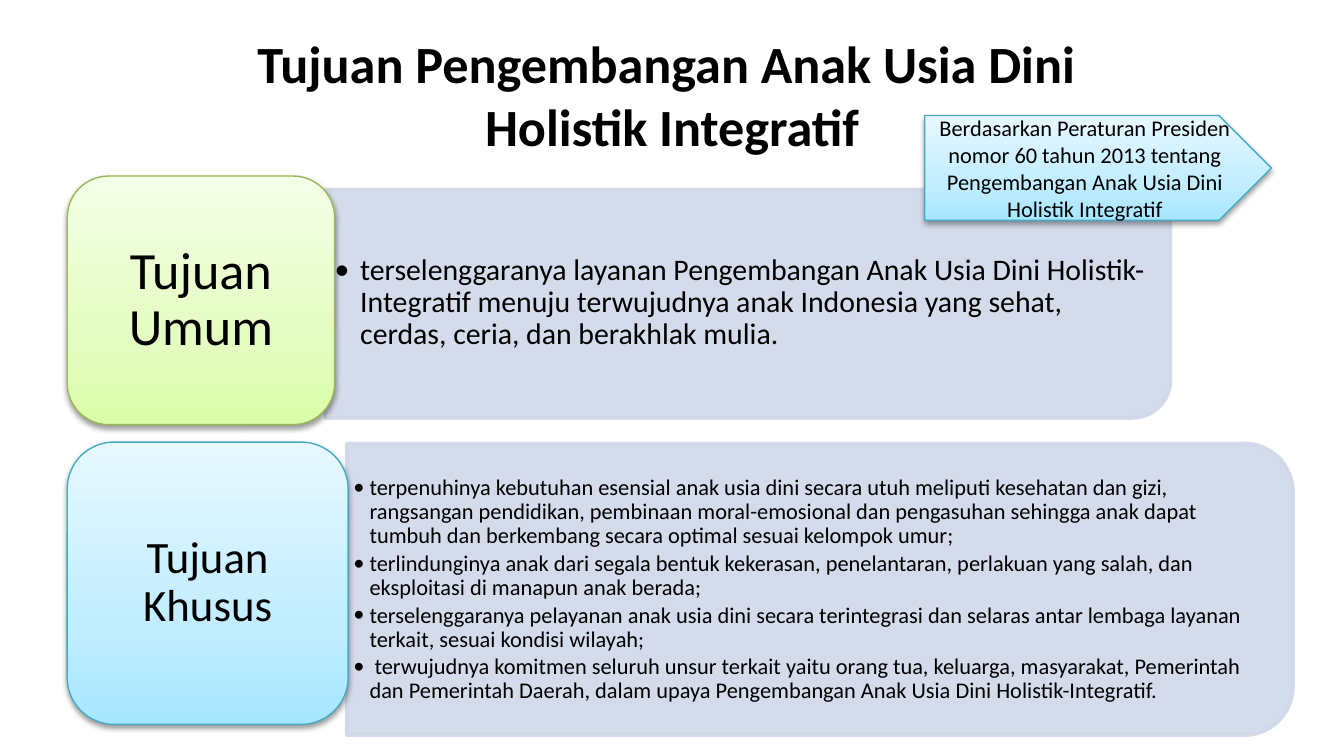
from pptx import Presentation
from pptx.dml.color import RGBColor
from pptx.enum.shapes import MSO_SHAPE as Shape
from pptx.enum.text import MSO_ANCHOR as Anchor, MSO_AUTO_SIZE as AutoSize, PP_ALIGN as Align
from pptx.oxml import parse_xml
from pptx.oxml.ns import nsdecls
from pptx.util import Inches, Pt

BLACK = RGBColor(0x00, 0x00, 0x00)
PANEL = RGBColor(0xD0, 0xD8, 0xE8)
GREEN_EDGE = RGBColor(0x98, 0xB9, 0x55)
BLUE_EDGE = RGBColor(0x46, 0xAA, 0xC5)
GREEN_STOPS = [(0, RGBColor(0xDA, 0xFD, 0xA7)), (35, RGBColor(0xE4, 0xFC, 0xC2)),
               (100, RGBColor(0xF5, 0xFF, 0xE7))]
BLUE_STOPS = [(0, RGBColor(0xA7, 0xE6, 0xFF)), (35, RGBColor(0xC1, 0xED, 0xFF)),
              (100, RGBColor(0xE7, 0xF8, 0xFF))]

GENERAL_GOAL = [
    "terselenggaranya layanan Pengembangan Anak Usia Dini Holistik-Integratif menuju "
    "terwujudnya anak Indonesia yang sehat, cerdas, ceria, dan berakhlak mulia.",
]
SPECIFIC_GOALS = [
    "terpenuhinya kebutuhan esensial anak usia dini secara utuh meliputi kesehatan dan gizi, "
    "rangsangan pendidikan, pembinaan moral-emosional dan pengasuhan sehingga anak dapat "
    "tumbuh dan berkembang secara optimal sesuai kelompok umur;",
    "terlindunginya anak dari segala bentuk kekerasan, penelantaran, perlakuan yang salah, "
    "dan eksploitasi di manapun anak berada;",
    "terselenggaranya pelayanan anak usia dini secara terintegrasi dan selaras antar lembaga "
    "layanan terkait, sesuai kondisi wilayah;",
    " terwujudnya komitmen seluruh unsur terkait yaitu orang tua, keluarga, masyarakat, "
    "Pemerintah dan Pemerintah Daerah, dalam upaya Pengembangan Anak Usia Dini "
    "Holistik-Integratif.",
]


def write(shape, paragraphs, size, bold=False, align=Align.CENTER, spacing=None,
          after=0, hanging=0, inset=(0.1, 0.05)):
    """Fill a shape with formatted paragraphs, bulleted when hanging is set."""
    frame = shape.text_frame
    frame.word_wrap = True
    frame.auto_size = AutoSize.NONE
    frame.vertical_anchor = Anchor.MIDDLE
    frame.margin_left = frame.margin_right = Inches(inset[0])
    frame.margin_top = frame.margin_bottom = Inches(inset[1])
    for index, text in enumerate(paragraphs):
        paragraph = frame.add_paragraph() if index else frame.paragraphs[0]
        paragraph.text = text
        paragraph.alignment = align
        paragraph.line_spacing = spacing
        paragraph.space_after = Pt(size * after)
        if hanging:
            paragraph.level = 1
            properties = paragraph._p.get_or_add_pPr()
            properties.set("marL", str(Inches(hanging)))
            properties.set("indent", str(-Inches(hanging)))
            properties.append(parse_xml(f'<a:buFont {nsdecls("a")} typeface="Calibri"/>'))
            properties.append(parse_xml(f'<a:buChar {nsdecls("a")} char="•"/>'))
        for run in paragraph.runs:
            run.font.name = "Calibri"
            run.font.size = Pt(size)
            run.font.bold = bold
            run.font.color.rgb = BLACK


def add_glossy(slide, preset, left, top, width, height, stops, edge):
    """Add a shape with a vertical gradient, a thin edge and a soft shadow."""
    shape = slide.shapes.add_shape(preset, Inches(left), Inches(top), Inches(width), Inches(height))
    shape.line.color.rgb = edge
    shape.line.width = Pt(0.75)
    shape.shadow.inherit = False
    properties = shape.element.spPr
    colours = "".join(f'<a:gs pos="{position * 1000}"><a:srgbClr val="{colour}"/></a:gs>'
                      for position, colour in stops)
    properties.insert(2, parse_xml(
        f'<a:gradFill {nsdecls("a")} rotWithShape="1"><a:gsLst>{colours}</a:gsLst>'
        '<a:lin ang="16200000" scaled="0"/></a:gradFill>'))
    properties[-1].append(parse_xml(
        f'<a:outerShdw {nsdecls("a")} blurRad="{Pt(3.1)}" dist="{Pt(1.6)}" dir="5400000" '
        'rotWithShape="0"><a:srgbClr val="000000"><a:alpha val="38000"/></a:srgbClr>'
        '</a:outerShdw>'))
    return shape


def add_panel(slide, left, top, width, height):
    """Add a translucent panel rounded on its right side."""
    shift = (width - height) / 2
    panel = slide.shapes.add_shape(Shape.ROUND_2_SAME_RECTANGLE, Inches(left + shift),
                                   Inches(top - shift), Inches(height), Inches(width))
    panel.rotation = 90
    panel.shadow.inherit = False
    panel.fill.solid()
    panel.fill.fore_color.rgb = PANEL
    panel.line.color.rgb = PANEL
    panel.line.width = Pt(2)
    for colour in panel.element.spPr.xpath(".//a:srgbClr"):
        colour.append(parse_xml(f'<a:alpha {nsdecls("a")} val="90000"/>'))


def add_goals(slide, left, top, width, height, goals, **style):
    """Add a bulleted list of goals."""
    box = slide.shapes.add_textbox(Inches(left), Inches(top), Inches(width), Inches(height))
    write(box, goals, align=Align.LEFT, spacing=0.9, after=0.15, **style)


def add_title(slide, text):
    """Place and format the slide title."""
    title = slide.shapes.title
    title.left, title.top = Inches(0.5), Inches(0.23)
    title.width, title.height = Inches(9), Inches(0.94)
    write(title, [text], 28, bold=True)


def main():
    """Build and save the slide."""
    deck = Presentation()
    deck.slide_width, deck.slide_height = Inches(10), Inches(45 / 8)
    slide = deck.slides.add_slide(deck.slide_layouts[5])
    add_title(slide, "Tujuan Pengembangan Anak Usia Dini \vHolistik Integratif")

    add_panel(slide, 2.42, 1.41, 6.29, 1.7)
    add_goals(slide, 2.42, 1.49, 6.21, 1.53, GENERAL_GOAL,
              size=16, hanging=0.19, inset=(0.07, 0.03))
    general = add_glossy(slide, Shape.ROUNDED_RECTANGLE, 0.5, 1.31, 1.99, 1.85,
                         GREEN_STOPS, GREEN_EDGE)
    write(general, ["Tujuan Umum"], 28, spacing=0.9, after=0.35, inset=(0.12, 0.06))

    add_panel(slide, 2.58, 3.3, 7.04, 2.17)
    add_goals(slide, 2.58, 3.41, 6.93, 1.96, SPECIFIC_GOALS,
              size=12, hanging=0.12, inset=(0.05, 0.03))
    specific = add_glossy(slide, Shape.ROUNDED_RECTANGLE, 0.5, 3.29, 2.09, 2.1,
                          BLUE_STOPS, BLUE_EDGE)
    write(specific, ["Tujuan Khusus"], 24, spacing=0.9, after=0.35)

    regulation = add_glossy(slide, Shape.PENTAGON, 6.88, 0.86, 2.58, 0.78, BLUE_STOPS, BLUE_EDGE)
    write(regulation, ["Berdasarkan Peraturan Presiden nomor 60 tahun 2013 tentang "
                       "Pengembangan Anak Usia Dini Holistik Integratif"], 12)
    deck.save("out.pptx")


if __name__ == "__main__":
    main()
